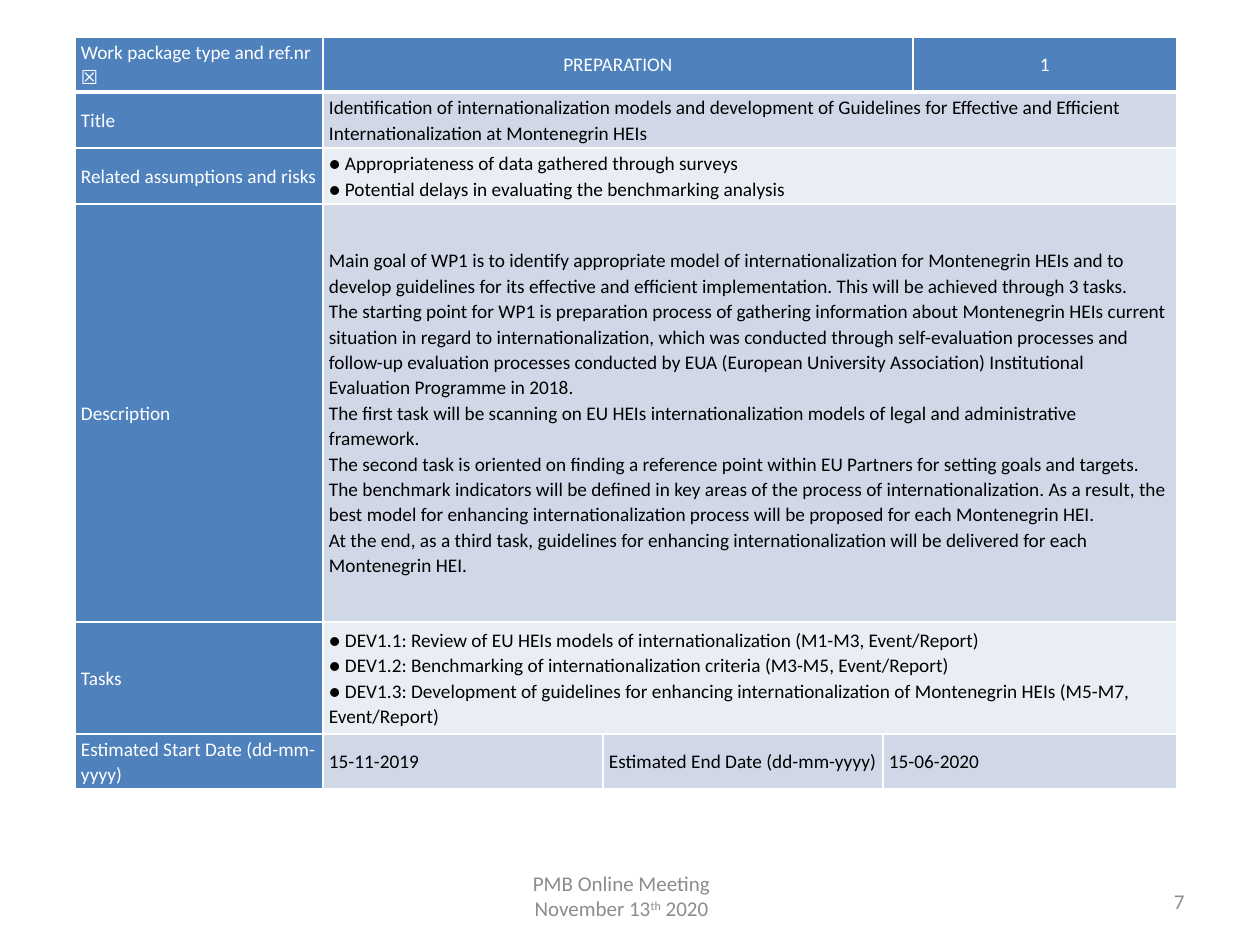
"""Build the work package overview slide."""
import pptx
import pptx.dml.color
import pptx.enum.text
import pptx.oxml
import pptx.oxml.ns
import pptx.util

RGBColor = pptx.dml.color.RGBColor
WHITE = RGBColor(0xFF, 0xFF, 0xFF)
BLACK = RGBColor(0, 0, 0)
GRAY = RGBColor(0x8C, 0x8C, 0x8C)
BLUE = RGBColor(0x4F, 0x81, 0xBD)
BAND_DARK = RGBColor(0xD0, 0xD8, 0xE8)
BAND_LIGHT = RGBColor(0xE9, 0xED, 0xF4)

LEFT = pptx.enum.text.PP_ALIGN.LEFT
CENTER = pptx.enum.text.PP_ALIGN.CENTER
RIGHT = pptx.enum.text.PP_ALIGN.RIGHT
MIDDLE = pptx.enum.text.MSO_ANCHOR.MIDDLE

COLUMN_WIDTHS = [248, 280, 280, 30, 264]
ROW_HEIGHTS = [55, 56, 56, 418, 112, 55]

ROWS = [
    [(0, 0, ["Work package type and ref.nr ☒"]), (1, 3, ["PREPARATION"]), (4, 4, ["1"])],
    [(0, 0, ["Title"]), (1, 4, [
        "Identification of internationalization models and development of Guidelines for "
        "Effective and Efficient Internationalization at Montenegrin HEIs"])],
    [(0, 0, ["Related assumptions and risks"]), (1, 4, [
        "● Appropriateness of data gathered through surveys",
        "● Potential delays in evaluating the benchmarking analysis"])],
    [(0, 0, ["Description"]), (1, 4, [
        "Main goal of WP1 is to identify appropriate model of internationalization for "
        "Montenegrin HEIs and to develop guidelines for its effective and efficient "
        "implementation. This will be achieved through 3 tasks.",
        "The starting point for WP1 is preparation process of gathering information about "
        "Montenegrin HEIs current situation in regard to internationalization, which was "
        "conducted through self-evaluation processes and follow-up evaluation processes "
        "conducted by EUA (European University Association) Institutional Evaluation "
        "Programme in 2018.",
        "The first task will be scanning on EU HEIs internationalization models of legal "
        "and administrative framework.",
        "The second task is oriented on finding a reference point within EU Partners for "
        "setting goals and targets. The benchmark indicators will be defined in key areas "
        "of the process of internationalization. As a result, the best model for enhancing "
        "internationalization process will be proposed for each Montenegrin HEI.",
        "At the end, as a third task, guidelines for enhancing internationalization will be "
        "delivered for each Montenegrin HEI."])],
    [(0, 0, ["Tasks"]), (1, 4, [
        "● DEV1.1: Review of EU HEIs models of internationalization (M1-M3, Event/Report)",
        "● DEV1.2: Benchmarking of internationalization criteria (M3-M5, Event/Report)",
        "● DEV1.3: Development of guidelines for enhancing internationalization of "
        "Montenegrin HEIs (M5-M7, Event/Report)"])],
    [(0, 0, ["Estimated Start Date (dd-mm-yyyy)"]), (1, 1, ["15-11-2019"]),
     (2, 2, ["Estimated End Date (dd-mm-yyyy)"]), (3, 4, ["15-06-2020"])],
]


def px(length):
    return pptx.util.Emu(round(length * 914400 / 126))


class SlideBuilder:
    font = "Calibri"
    table_size = 11
    footer_size = 12
    line_spacing = 1.07

    def __init__(self, slide):
        self.slide = slide

    def add_paragraphs(self, frame, paragraphs, size, color, alignment, spacing=None):
        frame.word_wrap = True
        for index, runs in enumerate(paragraphs):
            paragraph = frame.paragraphs[0] if index == 0 else frame.add_paragraph()
            paragraph.alignment = alignment
            paragraph.line_spacing = spacing
            for text, baseline in runs:
                run = paragraph.add_run()
                run.text = text
                run.font.name = self.font
                run.font.size = pptx.util.Pt(size)
                run.font.color.rgb = color
                if baseline:
                    run.font._element.set("baseline", str(baseline))

    def text(self, left, top, width, height, paragraphs, alignment):
        shape = self.slide.shapes.add_textbox(px(left), px(top), px(width), px(height))
        shape.text_frame.vertical_anchor = MIDDLE
        self.add_paragraphs(shape.text_frame, paragraphs, self.footer_size, GRAY, alignment)

    def borders(self, cell, bottom):
        properties = cell._tc.get_or_add_tcPr()
        for index, (side, points) in enumerate(zip("LRTB", (1, 1, 1, bottom))):
            properties.insert(index, pptx.oxml.parse_xml(
                f'<a:ln{side} {pptx.oxml.ns.nsdecls("a")} w="{pptx.util.Pt(points)}">'
                f'<a:solidFill><a:srgbClr val="{WHITE}"/></a:solidFill></a:ln{side}>'))

    def table(self, left, top, widths, heights, rows):
        table = self.slide.shapes.add_table(
            len(heights), len(widths), px(left), px(top),
            px(sum(widths)), px(sum(heights))).table
        table.first_row = table.horz_banding = False
        for column, width in zip(table.columns, widths):
            column.width = px(width)
        for row, height in zip(table.rows, heights):
            row.height = px(height)
        for row_index, row in enumerate(rows):
            is_header = row_index == 0
            band = BAND_DARK if row_index % 2 else BAND_LIGHT
            for first, last, lines in row:
                is_blue = is_header or first == 0
                cell = table.cell(row_index, first)
                if last > first:
                    cell.merge(table.cell(row_index, last))
                cell.vertical_anchor = MIDDLE
                cell.margin_left = cell.margin_right = px(6)
                cell.margin_top = cell.margin_bottom = 0
                self.add_paragraphs(
                    cell.text_frame, [[(line, 0)] for line in lines],
                    self.table_size, WHITE if is_blue else BLACK,
                    CENTER if is_header and first else LEFT, self.line_spacing)
                for column_index in range(first, last + 1):
                    part = table.cell(row_index, column_index)
                    part.fill.solid()
                    part.fill.fore_color.rgb = BLUE if is_blue else band
                    self.borders(part, 3 if is_header else 1)


def main():
    presentation = pptx.Presentation()
    presentation.slide_width = px(1260)
    presentation.slide_height = px(945)
    builder = SlideBuilder(presentation.slides.add_slide(presentation.slide_layouts[6]))
    builder.text(903, 876, 294, 50, [[("7", 0)]], RIGHT)
    builder.table(75, 37, COLUMN_WIDTHS, ROW_HEIGHTS, ROWS)
    builder.text(273, 872, 697, 47, [
        [("PMB Online Meeting", 0)],
        [("November 13", 0), ("th", 30000), (" 2020", 0)]], CENTER)
    presentation.save("out.pptx")


if __name__ == "__main__":
    main()
